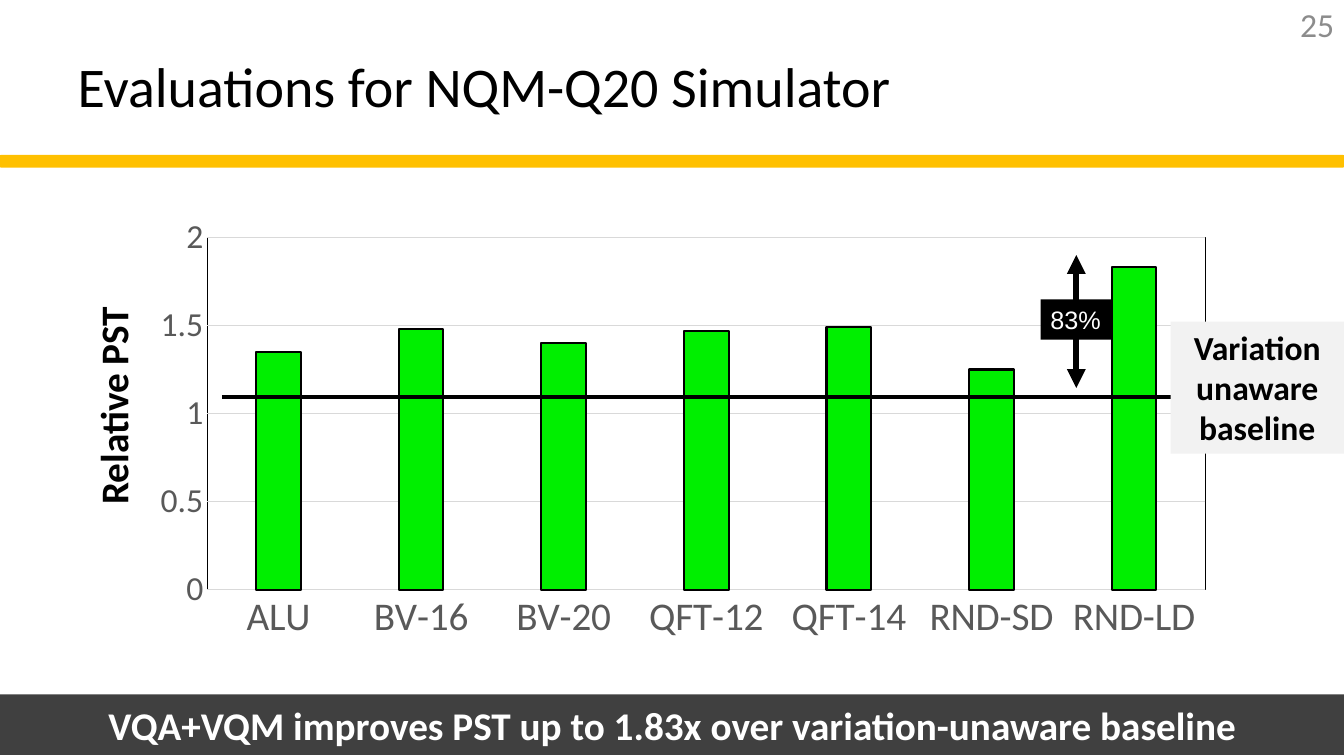
from dataclasses import dataclass

from lxml import etree
from pptx import Presentation
from pptx.chart.data import CategoryChartData
from pptx.dml.color import RGBColor
from pptx.enum.chart import XL_CHART_TYPE, XL_TICK_MARK
from pptx.enum.shapes import MSO_CONNECTOR, MSO_SHAPE
from pptx.enum.text import MSO_ANCHOR, MSO_AUTO_SIZE, PP_ALIGN
from pptx.oxml import parse_xml
from pptx.oxml.ns import nsdecls, qn
from pptx.util import Inches, Pt

COLUMNS = XL_CHART_TYPE.COLUMN_CLUSTERED
NO_TICK = XL_TICK_MARK.NONE
RECTANGLE = MSO_SHAPE.RECTANGLE
ROUNDED = MSO_SHAPE.ROUNDED_RECTANGLE
STRAIGHT = MSO_CONNECTOR.STRAIGHT
TOP, MIDDLE = MSO_ANCHOR.TOP, MSO_ANCHOR.MIDDLE
LEFT, CENTER, RIGHT = PP_ALIGN.LEFT, PP_ALIGN.CENTER, PP_ALIGN.RIGHT
NO_FIT = MSO_AUTO_SIZE.NONE


@dataclass(frozen=True)
class Theme:
    font: str = "Calibri"
    callout_font: str = "Arial"
    black: str = "000000"
    white: str = "FFFFFF"
    accent: str = "FFC000"
    bar: str = "00EF00"
    axis_text: str = "595959"
    grid: str = "D9D9D9"
    number: str = "8C8C8C"
    panel: str = "F2F2F2"
    banner: str = "404040"
    title_size: int = 40
    large: int = 28
    medium: int = 24
    small: int = 18


THEME = Theme()
SLIDE_WIDTH, SLIDE_HEIGHT = 13.33, 7.5
RELATIVE_PST = {
    "ALU": 1.35, "BV-16": 1.48, "BV-20": 1.4, "QFT-12": 1.47,
    "QFT-14": 1.49, "RND-SD": 1.25, "RND-LD": 1.83,
}


def color(value):
    return RGBColor.from_string(value)


def inches(box):
    return [Inches(length) for length in box]


def style_font(font, size, value, bold=False, name=THEME.font):
    font.name, font.size, font.bold = name, Pt(size), bold
    font.color.rgb = color(value)


def style_line(line, value, width):
    line.color.rgb = color(value)
    line.width = Pt(width)


def write(shape, text, size, value, bold=False, align=CENTER, anchor=MIDDLE,
          wrap=True, name=THEME.font):
    frame = shape.text_frame
    frame.text = text
    frame.word_wrap = wrap
    frame.auto_size = NO_FIT
    frame.vertical_anchor = anchor
    para = frame.paragraphs[0]
    para.alignment = align
    style_font(para.runs[0].font, size, value, bold, name)


def add_panel(page, box, fill, kind=RECTANGLE):
    panel = page.shapes.add_shape(kind, *inches(box))
    panel.shadow.inherit = False
    panel.fill.solid()
    panel.fill.fore_color.rgb = color(fill)
    panel.line.fill.background()
    return panel


def add_line(page, start, end, width, arrows=False):
    line = page.shapes.add_connector(STRAIGHT, *inches(start + end))
    style_line(line.line, THEME.black, width)
    if arrows:
        outline = line.line._get_or_add_ln()
        for tag in ("a:headEnd", "a:tailEnd"):
            etree.SubElement(outline, qn(tag), type="triangle")
    etree.SubElement(line._element.spPr, qn("a:effectLst"))


def add_header(page, box):
    left, top, width, height = box
    # Accent rule along the bottom of the header
    rule = add_panel(page, (left, top + height - 0.1, width, 0.1), THEME.accent, ROUNDED)
    style_line(rule.line, THEME.accent, 2)
    # Title
    title = page.shapes.title
    title.left, title.top, title.width, title.height = inches((left + 0.67, top + 0.22, 8.89, 1.25))
    write(title, "Evaluations for NQM-Q20 Simulator", THEME.title_size, THEME.black, align=LEFT)
    # Page number in the top right corner
    number = page.shapes.add_textbox(*inches((left + width - 0.71, top, 0.71, 0.48)))
    write(number, "25", THEME.medium, THEME.number, align=RIGHT)


def frame_plot(chart, x, y, width, height):
    """Fix the inner plot area and outline it in black."""
    plot_area = chart._chartSpace.chart.plotArea
    for layout in plot_area.findall(qn("c:layout")):
        plot_area.remove(layout)
    places = "".join(f'<c:{tag} val="{value}"/>' for tag, value in (
        ("layoutTarget", "inner"), ("xMode", "edge"), ("yMode", "edge"),
        ("x", x), ("y", y), ("w", width), ("h", height)))
    plot_area.insert(0, parse_xml(
        f'<c:layout {nsdecls("c")}><c:manualLayout>{places}</c:manualLayout></c:layout>'))
    plot_area.append(parse_xml(
        f'<c:spPr {nsdecls("c", "a")}><a:noFill/><a:ln w="9525"><a:solidFill>'
        f'<a:srgbClr val="{THEME.black}"/></a:solidFill></a:ln></c:spPr>'))


def add_bar_chart(page, box):
    data = CategoryChartData()
    data.categories = list(RELATIVE_PST)
    data.add_series("Series 1", list(RELATIVE_PST.values()))
    chart = page.shapes.add_chart(COLUMNS, *inches(box), data).chart
    chart.has_legend = chart.has_title = False
    style_font(chart.font, 10, THEME.black)
    # Bars
    plot = chart.plots[0]
    plot.gap_width, plot.overlap, plot.vary_by_categories = 219, -27, False
    bars = plot.series[0].format
    bars.fill.solid()
    bars.fill.fore_color.rgb = color(THEME.bar)
    style_line(bars.line, THEME.black, 1.5)
    # Axes
    benchmarks, values = chart.category_axis, chart.value_axis
    for axis, size in ((benchmarks, THEME.large), (values, THEME.medium)):
        axis.major_tick_mark = axis.minor_tick_mark = NO_TICK
        style_font(axis.tick_labels.font, size, THEME.axis_text)
    style_line(benchmarks.format.line, THEME.grid, 0.75)
    values.minimum_scale, values.maximum_scale, values.major_unit = 0, 2, 0.5
    values.format.line.fill.background()
    values.has_major_gridlines = True
    style_line(values.major_gridlines.format.line, THEME.grid, 0.75)
    frame_plot(chart, 0.06, 0.07, 0.92, 0.8)


def add_evaluation(page, box):
    left, top, _, _ = box
    add_bar_chart(page, box)
    # Rotated axis title
    label = page.shapes.add_textbox(*inches((left - 1.43, top + 1.69, 2.28, 0.57)))
    label.rotation = 270
    write(label, "Relative PST", THEME.large, THEME.black, True, anchor=TOP, wrap=False)
    # Baseline and its label
    baseline = top + 1.89
    add_line(page, (left + 0.79, baseline), (left + 10.35, baseline), 3)
    note = add_panel(page, (left + 10.2, top + 1.14, 1.72, 1.31), THEME.panel)
    write(note, "Variation unaware baseline", THEME.medium, THEME.black, True, anchor=TOP)


def add_gain(page, box):
    left, top, width, height = box
    middle = left + width / 2
    add_line(page, (middle, top), (middle, top + height), 4.5, arrows=True)
    badge = add_panel(page, (left, top + 0.44, width, 0.4), THEME.black)
    write(badge, "83%", THEME.small, THEME.white, align=LEFT, anchor=TOP,
          wrap=False, name=THEME.callout_font)


def add_banner(page, box):
    banner = add_panel(page, box, THEME.banner, ROUNDED)
    banner.adjustments[0] = 0
    write(banner, "VQA+VQM improves PST up to 1.83x over variation-unaware baseline",
          THEME.large, THEME.white, True)


def main():
    deck = Presentation()
    deck.slide_width, deck.slide_height = Inches(SLIDE_WIDTH), Inches(SLIDE_HEIGHT)
    page = deck.slides.add_slide(deck.slide_layouts.get_by_name("Title Only"))
    add_header(page, (0, 0, SLIDE_WIDTH, 1.65))
    add_evaluation(page, (1.41, 2.05, 10.76, 4.37))
    add_banner(page, (0, 6.89, SLIDE_WIDTH, 0.6))
    add_gain(page, (10.32, 2.53, 0.71, 1.32))
    deck.save("out.pptx")


if __name__ == "__main__":
    main()
